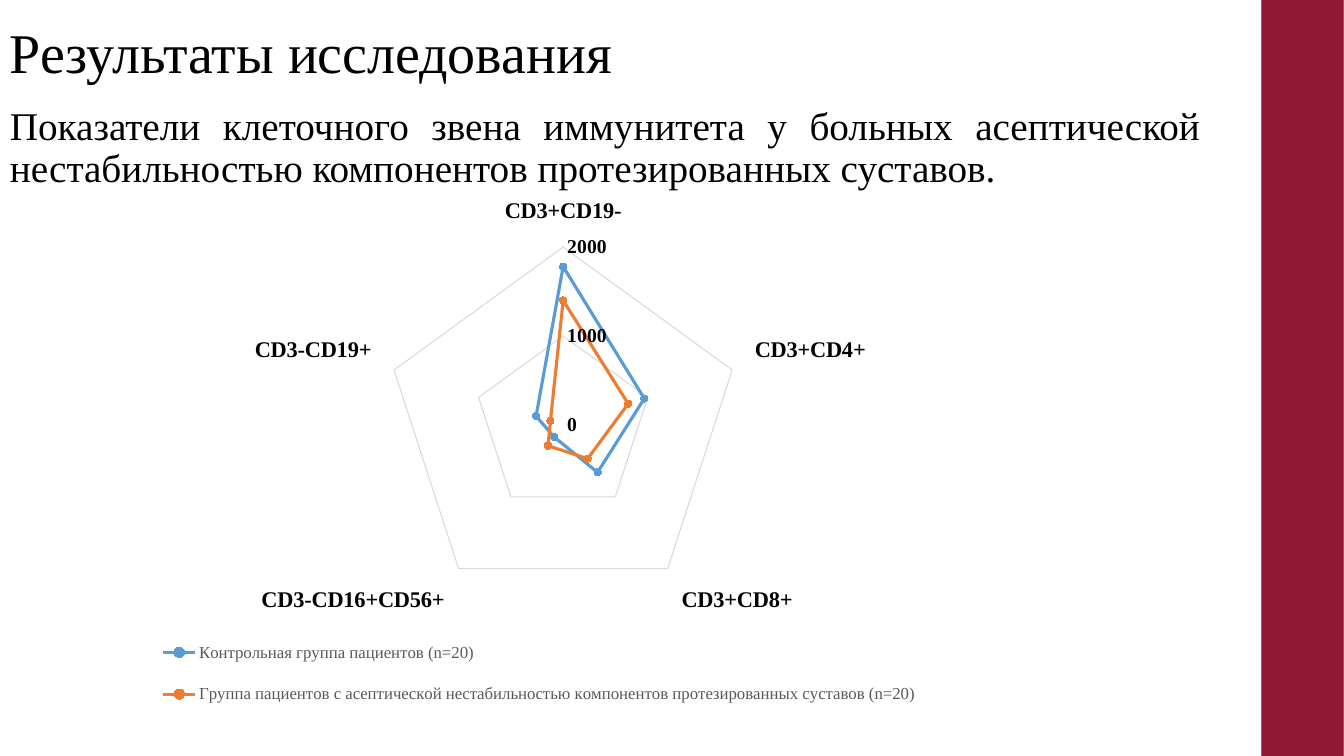
from dataclasses import dataclass

from pptx import Presentation
from pptx.chart.data import CategoryChartData
from pptx.dml.color import RGBColor
from pptx.enum.chart import XL_CHART_TYPE as ChartType
from pptx.enum.chart import XL_LEGEND_POSITION as LegendPos
from pptx.enum.chart import XL_MARKER_STYLE as Marker
from pptx.enum.chart import XL_TICK_MARK as Tick
from pptx.enum.shapes import MSO_SHAPE as Shape
from pptx.enum.text import MSO_ANCHOR as Anchor
from pptx.enum.text import PP_ALIGN as Align
from pptx.oxml import parse_xml
from pptx.oxml.ns import nsdecls, qn
from pptx.util import Inches, Pt


@dataclass(frozen=True)
class Theme:
    font: str = "Times New Roman"
    text: str = "000000"
    muted: str = "595959"
    grid: str = "D9D9D9"
    band: str = "911737"
    band_line: str = "43739E"
    title: int = 40
    body: int = 28
    category: int = 16
    value: int = 14
    legend: int = 12


THEME = Theme()

MARKERS = ["CD3+CD19-", "CD3+CD4+", "CD3+CD8+", "CD3-CD16+CD56+", "CD3-CD19+"]
GROUPS = [
    ("Контрольная группа пациентов (n=20)",
     (1780, 960, 660, 170, 320), "5B9BD5"),
    ("Группа пациентов с асептической нестабильностью компонентов "
     "протезированных суставов (n=20)",
     (1400, 770, 470, 290, 150), "ED7D31"),
]


def rgb(value):
    return RGBColor.from_string(value)


def set_font(font, size, color=THEME.text, bold=False):
    font.name, font.size, font.bold = THEME.font, Pt(size), bold
    font.color.rgb = rgb(color)


def add_text(s, box, text, size, align=Align.LEFT, anchor=Anchor.TOP):
    tf = s.shapes.add_textbox(*map(Inches, box)).text_frame
    tf.word_wrap = True
    tf.vertical_anchor = anchor
    p = tf.paragraphs[0]
    p.text = text
    p.alignment = align
    p.line_spacing = 0.9
    set_font(p.font, size)


def add_band(s, box):
    sp = s.shapes.add_shape(Shape.RECTANGLE, *map(Inches, box))
    sp.shadow.inherit = False
    sp.fill.solid()
    sp.fill.fore_color.rgb = rgb(THEME.band)
    sp.line.color.rgb = rgb(THEME.band_line)
    sp.line.width = Pt(1)


def set_layout(parent, index, box, inner=False):
    """Place a chart part by fractions of the chart area."""
    for old in parent.findall(qn("c:layout")):
        parent.remove(old)
    target = '<c:layoutTarget val="inner"/>' if inner else ""
    modes = "".join(f'<c:{k}Mode val="edge"/>' for k in "xy")
    sizes = "".join(f'<c:{k} val="{v}"/>' for k, v in zip("xywh", box))
    parent.insert(index, parse_xml(
        f'<c:layout {nsdecls("c")}><c:manualLayout>{target}{modes}{sizes}'
        "</c:manualLayout></c:layout>"))


def style_axes(chart):
    cat, val = chart.category_axis, chart.value_axis
    for axis, size in ((cat, THEME.category), (val, THEME.value)):
        axis.major_tick_mark = axis.minor_tick_mark = Tick.NONE
        set_font(axis.tick_labels.font, size, bold=True)
    cat.has_major_gridlines = False
    val.has_major_gridlines = True
    for line in (cat.format.line, val.major_gridlines.format.line):
        line.color.rgb = rgb(THEME.grid)
        line.width = Pt(0.75)
    val.format.line.fill.background()
    val.minimum_scale, val.maximum_scale, val.major_unit = 0, 2000, 1000


def style_series(series, color):
    series.format.line.color.rgb = rgb(color)
    series.format.line.width = Pt(2.25)
    marker = series.marker
    marker.style, marker.size = Marker.CIRCLE, 5
    marker.format.fill.solid()
    marker.format.fill.fore_color.rgb = rgb(color)
    marker.format.line.color.rgb = rgb(color)


def add_radar(s, box):
    data = CategoryChartData()
    data.categories = MARKERS
    for name, values, _ in GROUPS:
        data.add_series(name, values)
    chart = s.shapes.add_chart(
        ChartType.RADAR_MARKERS, *map(Inches, box), data).chart
    chart.has_title = False
    set_font(chart.font, 10)
    style_axes(chart)
    for series, (_, _, color) in zip(chart.plots[0].series, GROUPS):
        style_series(series, color)

    # Legend below the plot
    chart.has_legend = True
    legend = chart.legend
    legend.position = LegendPos.TOP
    legend.include_in_layout = False
    set_font(legend.font, THEME.legend, THEME.muted)
    set_layout(legend._element, 1, (0.12, 0.78, 0.67, 0.19))
    plot_area = chart._chartSpace.find(".//" + qn("c:plotArea"))
    set_layout(plot_area, 0, (0.28, 0.12, 0.39, 0.63), inner=True)


def main():
    prs = Presentation()
    prs.slide_width, prs.slide_height = Inches(13.33), Inches(7.5)
    s = prs.slides.add_slide(prs.slide_layouts[6])

    # Heading and introduction
    add_text(s, (0, 0.09, 12.42, 0.92), "Результаты исследования",
             THEME.title, anchor=Anchor.MIDDLE)
    add_text(s, (0, 1.01, 12, 0.95),
             "Показатели клеточного звена иммунитета у больных асептической "
             "нестабильностью компонентов протезированных суставов.",
             THEME.body, align=Align.JUSTIFY)

    # Side band and chart
    add_band(s, (12.51, -0.05, 0.82, 7.65))
    add_radar(s, (0.09, 1.78, 11.57, 5.6))

    prs.save("out.pptx")


if __name__ == "__main__":
    main()
